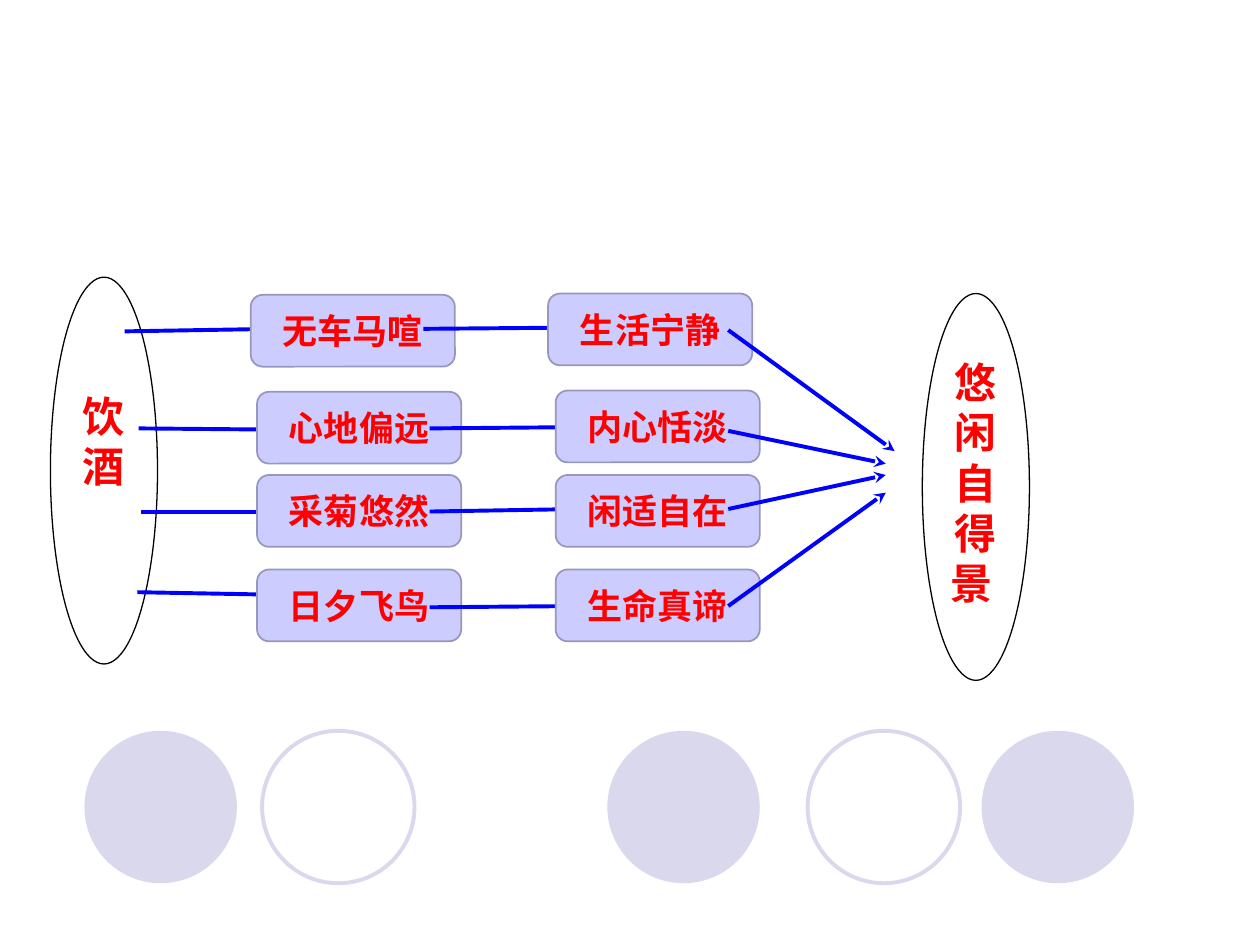
import pptx
import pptx.util
import pptx.dml.color
import pptx.enum.shapes
import pptx.enum.text
import pptx.oxml.ns
from lxml import etree

Inches = pptx.util.Inches
KIND = pptx.enum.shapes.MSO_SHAPE
ALIGN = pptx.enum.text.PP_ALIGN
ANCHOR = pptx.enum.text.MSO_ANCHOR
COLORS = {"pale": "D9D8EC", "box": "CCCCFF", "edge": "9797BD", "white": "FFFFFF",
          "black": "000000", "blue": "0000FF", "red": "FF0000"}
DISCS = [4.82, 7.79, 0.67]
RINGS = [6.41, 2.08]
CAUSES = [("无车马喧", 1.99, 2.34), ("心地偏远", 2.04, 3.11),
          ("采菊悠然", 2.04, 3.77), ("日夕飞鸟", 2.04, 4.52)]
MOODS = [("生活宁静", 4.35, 2.33), ("内心恬淡", 4.41, 3.1),
         ("闲适自在", 4.41, 3.77), ("生命真谛", 4.41, 4.52)]
STARTS = [(0.99, 2.63, 2.17, 2.61), (1.1, 3.4, 2.21, 3.41),
          (1.12, 4.06, 2.23, 4.06), (1.09, 4.7, 2.17, 4.72)]
LINKS = [(3.36, 2.61, 4.53, 2.6), (3.41, 3.4, 4.59, 3.39),
         (3.41, 4.06, 4.59, 4.04), (3.41, 4.82, 4.59, 4.81)]
ENDS = [(5.78, 2.62, 7.1, 3.58), (5.78, 3.42, 7.03, 3.68),
        (5.78, 4.04, 7.03, 3.77), (5.78, 4.81, 7.03, 3.91)]


def color(name):
    """Return the named colour."""
    return pptx.dml.color.RGBColor.from_string(COLORS[name])


def add_form(slide, kind, place, fill=None, line=None, width=1):
    """Add a preset shape with an optional fill and outline."""
    shape = slide.shapes.add_shape(kind, *map(Inches, place))
    shape.shadow.inherit = False
    if fill:
        shape.fill.solid()
        shape.fill.fore_color.rgb = color(fill)
    else:
        shape.fill.background()
    if line:
        shape.line.color.rgb = color(line)
        shape.line.width = pptx.util.Pt(width)
    else:
        shape.line.fill.background()
    return shape


def add_text(shape, lines, size):
    """Write bold red paragraphs, given as pairs of text and alignment."""
    frame = shape.text_frame
    frame.word_wrap = True
    frame.text = "\n".join(text for text, _ in lines)
    for para, (_, align) in zip(frame.paragraphs, lines):
        para.alignment = align
        para.font.name = "Arial"
        para.font.size = pptx.util.Pt(size)
        para.font.bold = True
        para.font.color.rgb = color("red")


def add_box(slide, text, left, top):
    """Add a rounded box with a centred phrase."""
    box = add_form(slide, KIND.FLOWCHART_ALTERNATE_PROCESS,
                   (left, top, 1.62, 0.57), "box", "edge")
    box.text_frame.vertical_anchor = ANCHOR.MIDDLE
    add_text(box, [(text, ALIGN.CENTER)], 20)


def add_oval(slide, left, top, lines, inset=0.05):
    """Add a tall oval whose narrow text area stacks the characters."""
    oval = add_form(slide, KIND.OVAL, (left, top, 0.85, 3.07), "white", "black", 0.75)
    oval.text_frame.vertical_anchor = ANCHOR.TOP
    oval.text_frame.margin_top = Inches(inset)
    add_text(oval, lines, 24)


def add_arrow(slide, ends):
    """Add a blue line with a stealth arrowhead."""
    arrow = slide.shapes.add_connector(
        pptx.enum.shapes.MSO_CONNECTOR.STRAIGHT, *map(Inches, ends))
    arrow.line.color.rgb = color("blue")
    arrow.line.width = pptx.util.Pt(2.25)
    qn = pptx.oxml.ns.qn
    etree.SubElement(arrow.line._get_or_add_ln(), qn("a:tailEnd"), type="stealth")
    etree.SubElement(arrow._element.spPr, qn("a:effectLst"))


def main():
    """Build and save the slide."""
    deck = pptx.Presentation()
    deck.slide_width, deck.slide_height = Inches(10), Inches(7.5)
    slide = deck.slides.add_slide(deck.slide_layouts[6])
    for left in DISCS:
        add_form(slide, KIND.OVAL, (left, 5.8, 1.21, 1.21), "pale")
    for left in RINGS:
        add_form(slide, KIND.OVAL, (left, 5.8, 1.21, 1.21), None, "pale", 2.25)
    add_oval(slide, 0.4, 2.2, [("饮", ALIGN.CENTER), ("酒", ALIGN.CENTER)], 0.45)
    for arrows, boxes in ((STARTS, CAUSES), (LINKS, MOODS), (ENDS, [])):
        for ends in arrows:
            add_arrow(slide, ends)
        for box in boxes:
            add_box(slide, *box)
    add_oval(slide, 7.32, 2.33, [("悠闲自得", ALIGN.CENTER), ("景", ALIGN.LEFT)])
    deck.save("out.pptx")


if __name__ == "__main__":
    main()
